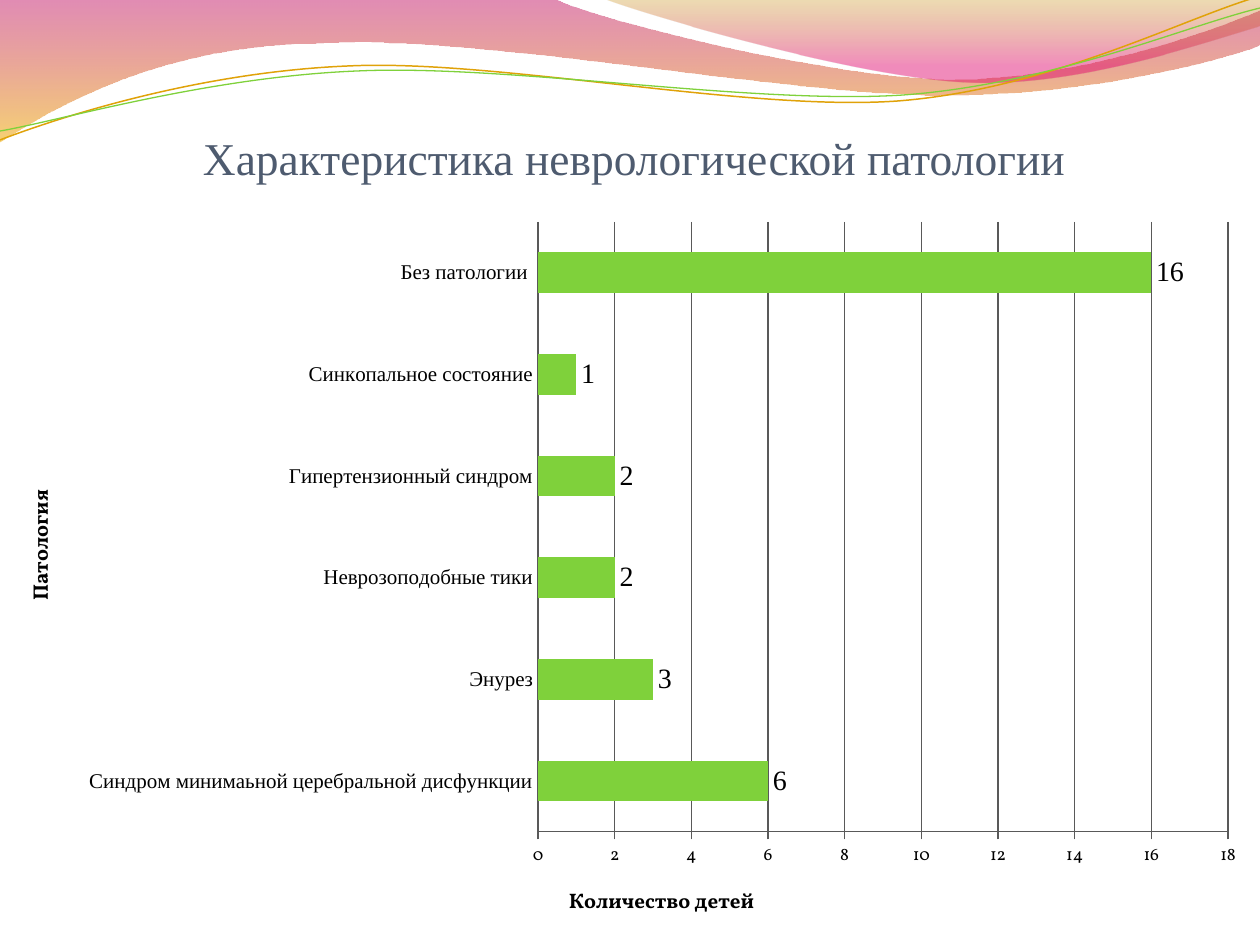
import math

from lxml import etree
from pptx import Presentation
from pptx import util as u
from pptx.chart.data import CategoryChartData
from pptx.dml.color import RGBColor
from pptx.enum import chart as charts, text
from pptx.oxml import ns

PX = 914400 / 126
SERIF = "Times New Roman"
BODY = "Vollkorn"
PIVOT_X, PIVOT_Y = 629, 73


def color(value):
    return RGBColor.from_string(value)


def write(frame, content, size, font, fill="000000", bold=False):
    frame.text = content
    paragraph = frame.paragraphs[0]
    paragraph.alignment = text.PP_ALIGN.CENTER
    run_font = paragraph.runs[0].font
    run_font.size = u.Pt(size)
    run_font.name = font
    run_font.bold = bold
    run_font.color.rgb = color(fill)


presentation = Presentation()
presentation.slide_width = round(1260 * PX)
presentation.slide_height = round(945 * PX)
slide = presentation.slides.add_slide(presentation.slide_layouts[5])

bands = [
    ([[(0, -1)], [(554, -1)],
      [(600, 21), (837, 79), (955, 79)], [(1075, 79), (1207, 33), (1260, 11)],
      [(1261, 45)],
      [(1239, 55), (1096, 96), (940, 95)], [(784, 95), (481, 35), (324, 43)],
      [(163, 44), (58, 105), (-1, 142)], [(0, -1)]],
     [(0, "BD0059", 45), (1, "F0AB00", 55)], None, 0),
    ([[(604, -1)],
      [(641, 14), (859, 78), (969, 82)], [(1079, 87), (1211, 40), (1260, 26)],
      [(1260, 0)], [(604, -1)]],
     [(0, "C38B00", 30), (0.8, "E1006B", 45)], None, 0),
    ([[(0, 140)],
      [(60, 117), (199, 72), (349, 66)], [(497, 59), (747, 112), (898, 101)],
      [(1050, 89), (1182, 19), (1257, -3)]],
     None, ("E0A209", 0.85), 2.7),
    ([[(0, 131)],
      [(59, 121), (207, 77), (357, 71)], [(508, 64), (752, 105), (903, 95)],
      [(1053, 84), (1185, 26), (1260, 8)]],
     None, ("7FD13B", 0.75), 2.7),
]
for segments, stops, stroke, tilt in bands:
    cosine, sine = math.cos(math.radians(tilt)), math.sin(math.radians(tilt))
    curves = [[(round((PIVOT_X + (x - PIVOT_X) * cosine - (y - PIVOT_Y) * sine) * PX),
                round((PIVOT_Y + (x - PIVOT_X) * sine + (y - PIVOT_Y) * cosine) * PX))
               for x, y in segment] for segment in segments]
    builder = slide.shapes.build_freeform(*curves[0][0])
    builder.add_line_segments([curve[-1] for curve in curves[1:]], close=stops is not None)
    shape = builder.convert_to_shape()
    lines = list(shape.element.iter(ns.qn("a:lnTo")))
    for line, curve in zip(lines, curves[1:]):
        if len(curve) == 3:
            bezier = etree.Element(ns.qn("a:cubicBezTo"))
            for x, y in curve:
                etree.SubElement(bezier, ns.qn("a:pt"), x=str(x - shape.left), y=str(y - shape.top))
            line.getparent().replace(line, bezier)
    shape.rotation = -tilt
    shape.shadow.inherit = False
    if stops:
        shape.fill.gradient()
        shape.fill.gradient_angle = 270
        for stop, (position, value, _) in zip(shape.fill.gradient_stops, stops):
            stop.position = position
            stop.color.rgb = color(value)
        for element, (_, _, alpha) in zip(shape.element.iter(ns.qn("a:gs")), stops):
            etree.SubElement(element[0], ns.qn("a:alpha"), val=str(alpha * 1000))
        shape.line.fill.background()
    else:
        shape.fill.background()
        shape.line.color.rgb = color(stroke[0])
        shape.line.width = u.Pt(stroke[1])

title = slide.shapes.title
title.left, title.top, title.width, title.height = [round(n * PX) for n in (54, 115, 1161, 70)]
frame = title.text_frame
frame.margin_left = frame.margin_right = frame.margin_bottom = 0
frame.margin_top = round(6 * PX)
frame.vertical_anchor = text.MSO_ANCHOR.BOTTOM
frame.word_wrap = True
write(frame, "Характеристика неврологической патологии", 26, SERIF, "4E5B6F")
title.element.getparent().append(title.element)

data = CategoryChartData()
data.categories = [
    "Синдром минимаьной церебральной дисфункции", "Энурез", "Неврозоподобные тики",
    "Гипертензионный синдром", "Синкопальное состояние", "Без патологии ",
]
data.add_series("Series 1", (6, 3, 2, 2, 1, 16))
chart = slide.shapes.add_chart(
    charts.XL_CHART_TYPE.BAR_CLUSTERED,
    *[round(n * PX) for n in (0, 207, 1260, 738)], data).chart
chart.has_legend = False
chart.has_title = False
chart.font.size = u.Pt(10)
chart.font.name = BODY
chart.font.color.rgb = color("000000")

plot = chart.plots[0]
plot.gap_width = 150
plot.vary_by_categories = False
fill = plot.series[0].format.fill
fill.solid()
fill.fore_color.rgb = color("7FD13B")
plot.has_data_labels = True
labels = plot.data_labels
labels.show_value = True
labels.position = charts.XL_LABEL_POSITION.OUTSIDE_END
labels.font.size = u.Pt(16)
labels.font.name = SERIF
labels.font.color.rgb = color("000000")

category_axis, value_axis = chart.category_axis, chart.value_axis
for axis, caption, size, font, tick in [
    (category_axis, "Патология", 12, SERIF, charts.XL_TICK_MARK.NONE),
    (value_axis, "Количество детей", 10, BODY, charts.XL_TICK_MARK.CROSS),
]:
    write(axis.axis_title.text_frame, caption, 12, BODY, bold=True)
    axis.tick_labels.font.size = u.Pt(size)
    axis.tick_labels.font.name = font
    axis.tick_labels.font.color.rgb = color("000000")
    axis.major_tick_mark = tick
    axis.minor_tick_mark = charts.XL_TICK_MARK.NONE
value_axis.minimum_scale, value_axis.maximum_scale, value_axis.major_unit = 0, 18, 2
value_axis.has_major_gridlines = True
for part in (category_axis, value_axis, value_axis.major_gridlines):
    part.format.line.color.rgb = color("595959")
    part.format.line.width = u.Pt(0.75)

plot_area = chart.element.find(".//" + ns.qn("c:plotArea"))
category_title, value_title = plot_area.iter(ns.qn("c:title"))
category_body = category_title.find(".//" + ns.qn("a:bodyPr"))
category_body.set("rot", "-5400000")
category_body.set("vert", "horz")
for parent, index, box in [
    (plot_area, 0, (538, 15, 690, 610)),
    (category_title, 1, (22, 279)),
    (value_title, 1, (565, 676)),
]:
    for old in parent.findall(ns.qn("c:layout")):
        parent.remove(old)
    layout = etree.Element(ns.qn("c:layout"))
    parent.insert(index, layout)
    manual = etree.SubElement(layout, ns.qn("c:manualLayout"))
    if parent is plot_area:
        etree.SubElement(manual, ns.qn("c:layoutTarget"), val="inner")
    for tag in ("xMode", "yMode"):
        etree.SubElement(manual, ns.qn("c:" + tag), val="edge")
    for tag, length, whole in zip("xywh", box, (1260, 738, 1260, 738)):
        etree.SubElement(manual, ns.qn("c:" + tag), val=str(length / whole))

presentation.save("out.pptx")
